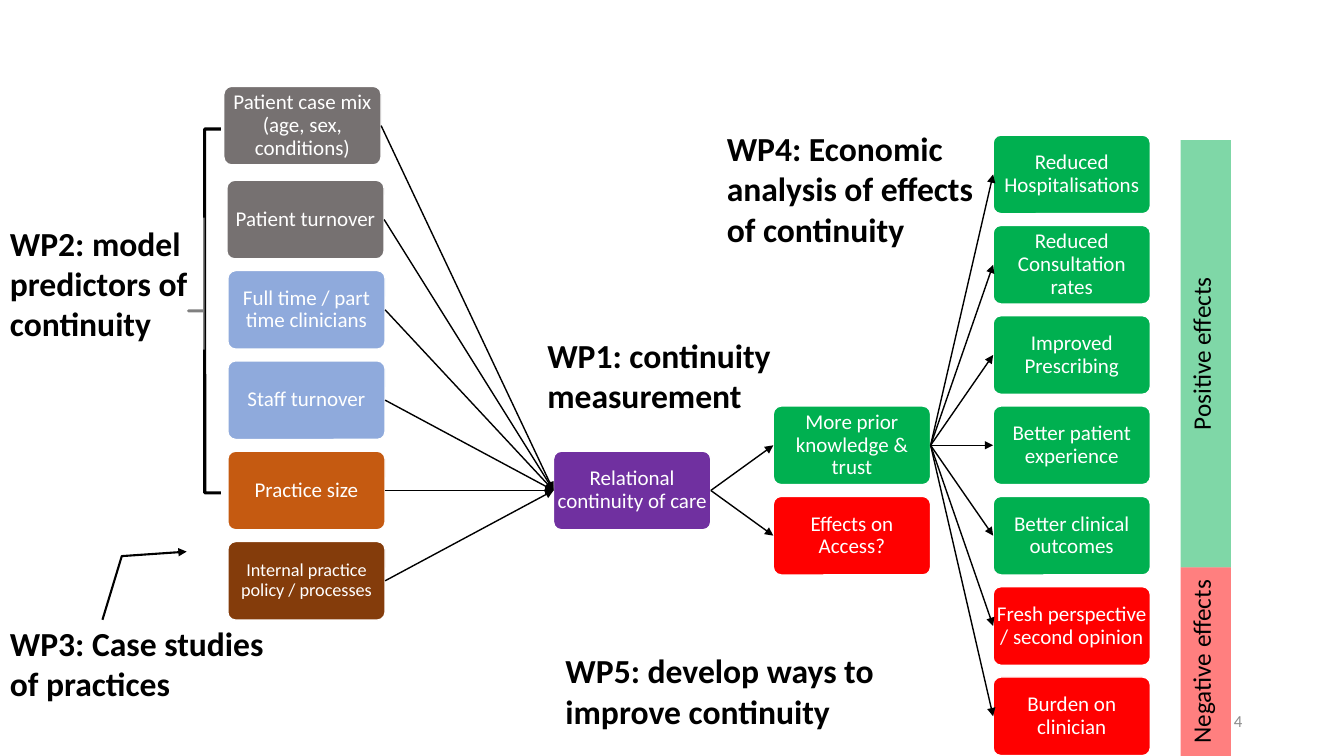
from lxml.etree import SubElement
from pptx import Presentation
from pptx.dml.color import RGBColor
from pptx.enum.shapes import MSO_CONNECTOR, MSO_SHAPE
from pptx.enum.text import MSO_ANCHOR, PP_ALIGN
from pptx.oxml.ns import qn
from pptx.util import Inches, Pt

COLORS = {
    "black": "000000", "white": "FFFFFF", "number": "8C8C8C",
    "gray": "767171", "blue": "8FAADC", "orange": "C55A11", "brown": "843C0B",
    "purple": "7030A0", "green": "00B050", "red": "FF0000",
}

# Each box: text, column left, row, colour, text size
PREDICTORS = [
    ("Patient case mix (age, sex, conditions)", 2.22, -0.54, "gray", 15),
    ("Patient turnover", 2.25, 0.5, "gray", 15),
    ("Full time / part time clinicians", 2.26, 1.5, "blue", 15),
    ("Staff turnover", 2.26, 2.5, "blue", 15),
    ("Practice size", 2.26, 3.5, "orange", 15),
    ("Internal practice policy / processes", 2.26, 4.5, "brown", 13),
]
CONTINUITY = ("Relational continuity of care", 5.49, 3.5, "purple", 15)
TRUST = ("More prior knowledge & trust", 7.67, 3, "green", 15)
ACCESS = ("Effects on Access?", 7.67, 4, "red", 15)
POSITIVE_OUTCOMES = [
    "Reduced Hospitalisations", "Reduced Consultation rates",
    "Improved Prescribing", "Better patient experience",
    "Better clinical outcomes",
]
NEGATIVE_OUTCOMES = ["Fresh perspective / second opinion", "Burden on clinician"]

# Each heading: text, left, top, width, height
WP1 = ("WP1: continuity measurement", 5.33, 3.27, 2.5, 0.91)
WP2 = ("WP2: model predictors of continuity", 0, 2.16, 2.03, 1.31)
WP3 = ("WP3: Case studies of practices", 0, 6.19, 2.74, 0.77)
WP4 = ("WP4: Economic analysis of effects of continuity", 7.11, 1.22, 2.72, 1.31)
WP5 = ("WP5: develop ways to improve continuity", 5.51, 6.4, 3.29, 0.91)
EFFECT_BANDS = [
    ("Positive effects", 1.39, 4.24, "green"),
    ("Negative effects", 5.63, 1.87, "red"),
]

BOX_WIDTH, BOX_HEIGHT = 1.56, 0.78
FIRST_ROW, ROW_STEP = 1.34, 0.896
OUTCOME_LEFT = 9.85
WP3_POINTER = (-0.054, 0.629, -0.874, 0.559, -0.932, 0.324)

presentation = Presentation()
presentation.slide_width = Inches(13.33)
presentation.slide_height = Inches(7.5)
slide = presentation.slides.add_slide(presentation.slide_layouts[6])


def rgb(name):
    return RGBColor.from_string(COLORS[name])


def write(shape, text, size=24, color="black", bold=False, align=PP_ALIGN.LEFT,
          anchor=MSO_ANCHOR.TOP, inset=None, line_spacing=1.0):
    frame = shape.text_frame
    frame.word_wrap = True
    frame.vertical_anchor = anchor
    if inset is not None:
        frame.margin_left = frame.margin_right = Inches(inset)
        frame.margin_top = frame.margin_bottom = Inches(inset)
    paragraph = frame.paragraphs[0]
    paragraph.alignment = align
    paragraph.line_spacing = line_spacing
    run = paragraph.add_run()
    run.text = text
    run.font.name = "Calibri"
    run.font.size = Pt(size)
    run.font.bold = bold
    run.font.color.rgb = rgb(color)


def add_text(text, left, top, width, height, **text_format):
    shape = slide.shapes.add_textbox(*map(Inches, (left, top, width, height)))
    write(shape, text, **text_format)


def add_shape(kind, left, top, width, height, fill=None, alpha=None,
              line=None, line_width=1):
    """Add a preset shape; alpha is the fill opacity in percent."""
    shape = slide.shapes.add_shape(kind, *map(Inches, (left, top, width, height)))
    shape.shadow.inherit = False
    if fill:
        shape.fill.solid()
        shape.fill.fore_color.rgb = rgb(fill)
        if alpha:
            color = shape.fill._xPr.find(qn("a:solidFill"))[0]
            SubElement(color, qn("a:alpha"), val=str(alpha * 1000))
    else:
        shape.fill.background()
    if line:
        shape.line.color.rgb = rgb(line)
        shape.line.width = Pt(line_width)
    else:
        shape.line.fill.background()
    return shape


def add_arrowhead(line):
    SubElement(line._get_or_add_ln(), qn("a:tailEnd"), type="triangle")


def add_box(text, left, row, color, size):
    box = add_shape(MSO_SHAPE.ROUNDED_RECTANGLE, left, FIRST_ROW + row * ROW_STEP,
                    BOX_WIDTH, BOX_HEIGHT, fill=color, line="white")
    box.adjustments[0] = 0.1
    write(box, text, size=size, color="white", align=PP_ALIGN.CENTER,
          anchor=MSO_ANCHOR.MIDDLE, inset=0.01, line_spacing=0.9)
    return box


def add_arrow(source, target):
    """Join the right side of source to the left side of target."""
    arrow = slide.shapes.add_connector(MSO_CONNECTOR.STRAIGHT, 0, 0, 0, 0)
    arrow.begin_connect(source, 3)
    arrow.end_connect(target, 1)
    arrow.line.color.rgb = rgb("black")
    arrow.line.width = Pt(1)
    add_arrowhead(arrow.line)
    SubElement(arrow._element.spPr, qn("a:effectLst"))


add_text("4", 9.42, 6.95, 3, 0.4, size=12, color="number",
         align=PP_ALIGN.RIGHT, anchor=MSO_ANCHOR.MIDDLE)

predictors = [add_box(*predictor) for predictor in PREDICTORS]
continuity, trust, access = [add_box(*box) for box in (CONTINUITY, TRUST, ACCESS)]
outcome_texts = POSITIVE_OUTCOMES + NEGATIVE_OUTCOMES
outcomes = [
    add_box(text, OUTCOME_LEFT, row,
            "green" if row < len(POSITIVE_OUTCOMES) else "red", 15)
    for row, text in enumerate(outcome_texts)
]

for predictor in predictors:
    add_arrow(predictor, continuity)
for effect in (trust, access):
    add_arrow(continuity, effect)
for outcome in outcomes:
    add_arrow(trust, outcome)

for heading in (WP4, WP1, WP5):
    add_text(*heading, bold=True)

callout = add_shape(MSO_SHAPE.LINE_CALLOUT_2_NO_BORDER, *WP3[1:],
                    line="black", line_width=1.5)
for index, value in enumerate(WP3_POINTER):
    callout.adjustments[index] = value
callout._element.spPr.find(qn("a:xfrm")).set("flipH", "1")
add_arrowhead(callout.line)
write(callout, WP3[0], bold=True, anchor=MSO_ANCHOR.MIDDLE)

brace = add_shape(MSO_SHAPE.LEFT_BRACE, 1.87, 1.28, 0.32, 3.61,
                  line="black", line_width=2.25)
brace.adjustments[0] = 0
brace.adjustments[1] = 0.5

predictor_heading = add_shape(MSO_SHAPE.RECTANGLE, *WP2[1:], fill="white", alpha=50)
write(predictor_heading, WP2[0], bold=True)

for text, top, height, color in EFFECT_BANDS:
    band = add_shape(MSO_SHAPE.RECTANGLE, 11.71, top, 0.5, height,
                     fill=color, alpha=50)
    write(band, text, size=18, align=PP_ALIGN.CENTER)
    band.text_frame._txBody.bodyPr.set("vert", "vert270")

presentation.save("out.pptx")
